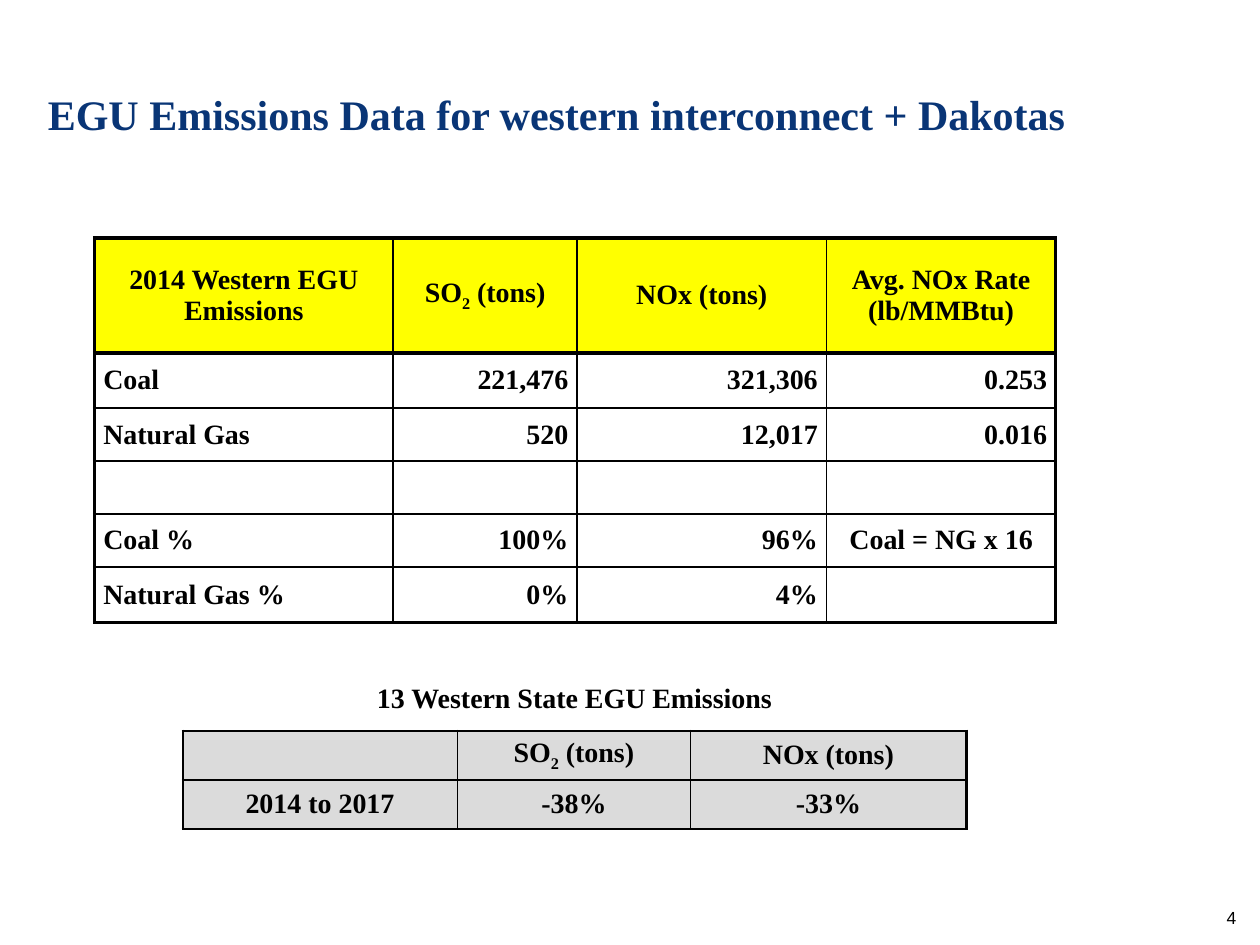
from lxml.etree import SubElement
from pptx import Presentation
from pptx.dml.color import RGBColor
from pptx.enum.text import MSO_ANCHOR, MSO_AUTO_SIZE, PP_ALIGN
from pptx.oxml.ns import qn
from pptx.util import Inches, Pt

COLORS = {"title": "093576", "text": "000000", "line": "000000",
          "header": "FFFF00", "panel": "DBDBDB"}
ALIGN = {"l": PP_ALIGN.LEFT, "c": PP_ALIGN.CENTER, "r": PP_ALIGN.RIGHT}
NO_STYLE = "{2D5ABB26-0587-4C30-8999-92F81FD0307C}"
THIN = 1
SO2 = "SO_2_ (tons)"  # underscores enclose a subscript
NOX = "NOx (tons)"


def set_all(obj, values):
    for name, value in values.items():
        setattr(obj, name, value)


class Deck:
    serif = {"name": "Times New Roman", "bold": True}

    def __init__(self, width, height):
        self.prs = Presentation()
        self.prs.slide_width, self.prs.slide_height = Inches(width), Inches(height)

    def add_slide(self):
        self.s = self.prs.slides.add_slide(self.prs.slide_layouts[5])

    def add_text(self, p, text, size, color="text", align="l", font=None):
        p.alignment = ALIGN[align]
        for i, part in enumerate(text.split("_")):
            r = p.add_run()
            r.text = part
            set_all(r.font, {"size": Pt(size), **(font or self.serif)})
            r.font.color.rgb = RGBColor.from_string(COLORS[color])
            if i % 2:
                r.font._element.set("baseline", "-25000")

    def title(self, text, left, top, width, height):
        sp = self.s.shapes.title
        set_all(sp, {"left": Inches(left), "top": Inches(top),
                     "width": Inches(width), "height": Inches(height)})
        tf = sp.text_frame
        set_all(tf, {"auto_size": MSO_AUTO_SIZE.NONE, "word_wrap": True,
                     "vertical_anchor": MSO_ANCHOR.BOTTOM,
                     "margin_left": 0, "margin_right": 0,
                     "margin_top": 0, "margin_bottom": Inches(0.04)})
        p = tf.paragraphs[0]
        p.line_spacing = 0.9
        self.add_text(p, text, 24, "title")

    def page_number(self, text, left, top, width, height):
        sp = self.s.shapes.add_textbox(*map(Inches, (left, top, width, height)))
        tf = sp.text_frame
        set_all(tf, {"word_wrap": True, "vertical_anchor": MSO_ANCHOR.MIDDLE})
        self.add_text(tf.paragraphs[0], text, 10, align="r", font={"name": "Arial"})

    def borders(self, cell, widths):
        tcPr = cell._tc.get_or_add_tcPr()
        for side, width in zip("LRTB", widths):
            ln = SubElement(tcPr, qn(f"a:ln{side}"), w=str(Pt(width)))
            if width:
                fill = SubElement(ln, qn("a:solidFill"))
                SubElement(fill, qn("a:srgbClr"), val=COLORS["line"])
            else:
                SubElement(ln, qn("a:noFill"))

    def table(self, left, top, cols, heights, rows, aligns, fills, frame,
              caption=False, rule=THIN):
        """Frame the grid below any caption row; rule is the line under its first row."""
        gf = self.s.shapes.add_table(
            len(rows), len(cols), Inches(left), Inches(top),
            Inches(sum(cols)), Inches(sum(heights)))
        tbl = gf.table
        set_all(tbl, {"first_row": False, "horz_banding": False})
        tbl._tbl.tblPr.find(qn("a:tableStyleId")).text = NO_STYLE
        for col, width in zip(tbl.columns, cols):
            col.width = Inches(width)
        for row, height in zip(tbl.rows, heights):
            row.height = Inches(height)

        first, last_row, last_col = int(caption), len(rows) - 1, len(cols) - 1
        lines = {first: frame, first + 1: rule, last_row + 1: frame}
        for i, texts in enumerate(rows):
            for j, text in enumerate(texts):
                cell = tbl.cell(i, j)
                set_all(cell, {"vertical_anchor": MSO_ANCHOR.MIDDLE,
                               "margin_left": Inches(0.07), "margin_right": Inches(0.07),
                               "margin_top": 0, "margin_bottom": 0})
                if i < first:
                    sides = (0, 0, 0, frame)
                else:
                    sides = (frame if j == 0 else THIN,
                             frame if j == last_col else THIN,
                             lines.get(i, THIN), lines.get(i + 1, THIN))
                self.borders(cell, sides)
                if fills[i]:
                    cell.fill.solid()
                    cell.fill.fore_color.rgb = RGBColor.from_string(COLORS[fills[i]])
                else:
                    cell.fill.background()
                if text:
                    self.add_text(cell.text_frame.paragraphs[0], text, 16,
                                  align=aligns[i][j])
        if caption:
            tbl.cell(0, 0).merge(tbl.cell(0, last_col))


def main():
    deck = Deck(10, 7.5)
    deck.add_slide()
    deck.title("EGU Emissions Data for western interconnect + Dakotas", 0.38, 0.02, 9.23, 1.13)
    deck.page_number("4", 7.58, 7.08, 2.33, 0.4)
    deck.table(
        1.45, 5.3, [2.18, 1.85, 2.19], [0.5, 0.39, 0.39],
        [["13 Western State EGU Emissions", "", ""],
         ["", SO2, NOX],
         ["2014 to 2017", "-38%", "-33%"]],
        ["ccc"] * 3, [None, "panel", "panel"], frame=1.5, caption=True)
    deck.table(
        0.75, 1.89, [2.37, 1.46, 1.98, 1.82], [0.91, 0.44, 0.42, 0.42, 0.42, 0.44],
        [["2014 Western EGU Emissions", SO2, NOX, "Avg. NOx Rate (lb/MMBtu)"],
         ["Coal", "221,476", "321,306", "0.253"],
         ["Natural Gas", "520", "12,017", "0.016"],
         ["", "", "", ""],
         ["Coal %", "100%", "96%", "Coal = NG x 16"],
         ["Natural Gas %", "0%", "4%", ""]],
        ["cccc"] + ["lrrr"] * 3 + ["lrrc"] * 2,
        ["header"] + [None] * 5, frame=2.25, rule=2.25)
    deck.prs.save("out.pptx")


if __name__ == "__main__":
    main()
